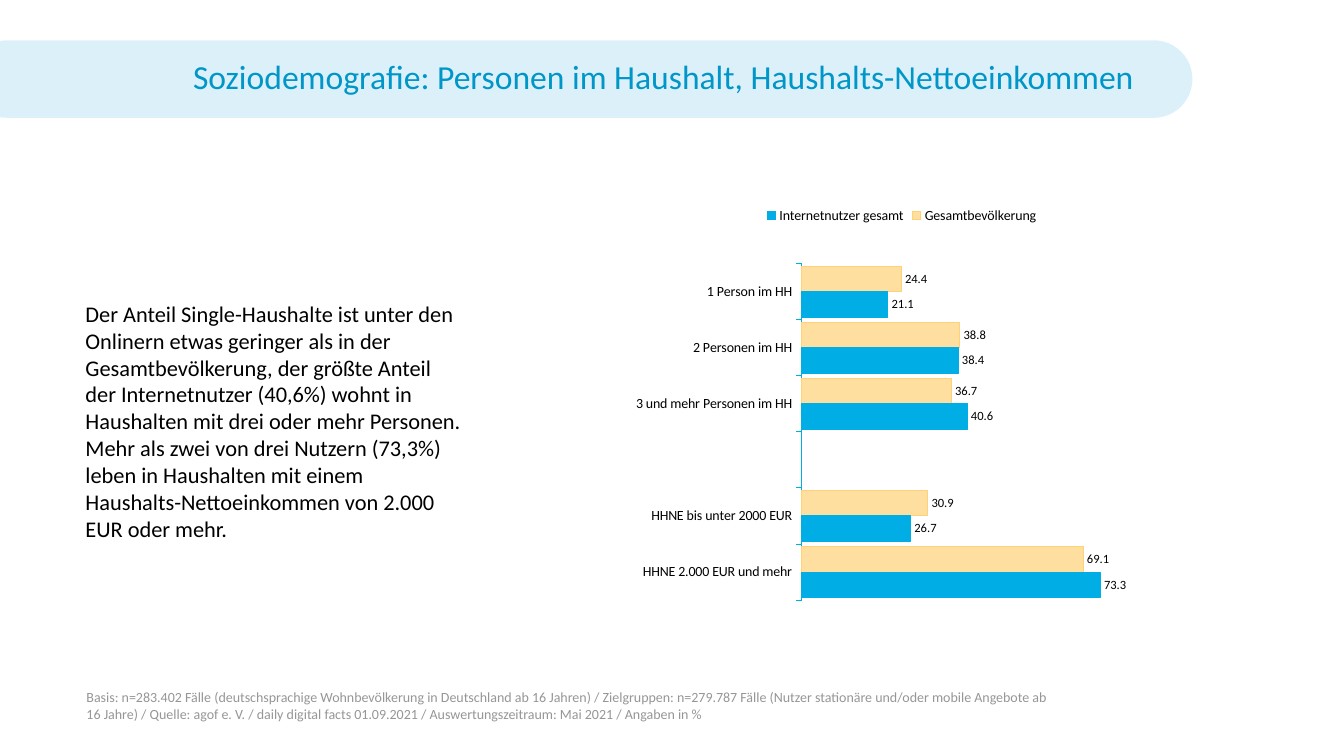
from lxml import etree
from pptx import Presentation
from pptx import util as u
from pptx.chart import data as cd
from pptx.dml import color
from pptx.enum import chart as ch, shapes, text
from pptx.oxml import ns, parse_xml

Pt = u.Pt
RGB = color.RGBColor
BLACK = RGB(0x00, 0x00, 0x00)
GREY = RGB(0x96, 0x96, 0x96)
PALE_BLUE = RGB(0xDC, 0xF0, 0xFA)
TITLE_BLUE = RGB(0x00, 0x96, 0xC8)
BAR_BLUE = RGB(0x00, 0xAD, 0xE4)
BAR_YELLOW = RGB(0xFF, 0xD2, 0x78)
NUMBER = "#,##0.0"

TITLE = "Soziodemografie: Personen im Haushalt, Haushalts-Nettoeinkommen"
BODY = (
    "Der Anteil Single-Haushalte ist unter den Onlinern etwas geringer als in der "
    "Gesamtbevölkerung, der größte Anteil der Internetnutzer (40,6%) wohnt in "
    "Haushalten mit drei oder mehr Personen. Mehr als zwei von drei Nutzern (73,3%) "
    "leben in Haushalten mit einem Haushalts-Nettoeinkommen von 2.000 EUR oder mehr."
)
BASIS = (
    "Basis: n=283.402 Fälle (deutschsprachige Wohnbevölkerung in Deutschland ab 16 Jahren) / "
    "Zielgruppen: n=279.787 Fälle (Nutzer stationäre und/oder mobile Angebote ab 16 Jahre) / "
    "Quelle: agof e. V. / daily digital facts 01.09.2021 / Auswertungszeitraum: Mai 2021 / "
    "Angaben in %"
)
CATEGORIES = [
    "1 Person im HH",
    "2 Personen im HH",
    "3 und mehr Personen im HH",
    "",
    "HHNE bis unter 2000 EUR",
    "HHNE 2.000 EUR und mehr",
]
SERIES = [
    ("Gesamtbevölkerung", [24.4, 38.8, 36.7, None, 30.9, 69.1], BAR_YELLOW, 70),
    ("Internetnutzer gesamt", [21.1, 38.4, 40.6, None, 26.7, 73.3], BAR_BLUE, 100),
]


def write(tf, content, *, size, color, anchor=text.MSO_ANCHOR.TOP,
          align=text.PP_ALIGN.LEFT, spacing=1.0, right=7.2):
    tf.word_wrap = True
    tf.vertical_anchor = anchor
    tf.margin_right = Pt(right)
    p = tf.paragraphs[0]
    p.alignment = align
    p.line_spacing = spacing
    r = p.add_run()
    r.text = content
    set_font(r.font, size, color)


def set_font(font, size, color=BLACK):
    font.name = SlideBuilder.font
    font.size = Pt(size)
    font.color.rgb = color


class SlideBuilder:
    font = "Calibri"

    def __init__(self, prs):
        self.s = prs.slides.add_slide(prs.slide_layouts[6])

    def text_box(self, box, content, **style):
        sp = self.s.shapes.add_textbox(*map(Pt, box))
        write(sp.text_frame, content, **style)

    def banner(self, box, content, fill, **style):
        sp = self.s.shapes.add_shape(shapes.MSO_SHAPE.ROUNDED_RECTANGLE, *map(Pt, box))
        sp.adjustments[0] = 0.5
        sp.shadow.inherit = False
        sp.fill.solid()
        sp.fill.fore_color.rgb = fill
        sp.line.fill.background()
        write(sp.text_frame, content, **style)

    def bar_chart(self, box, categories, series, plot_area):
        data = cd.CategoryChartData(number_format=NUMBER)
        data.categories = categories
        for name, values, _, _ in series:
            data.add_series(name, values)
        chart = self.s.shapes.add_chart(
            ch.XL_CHART_TYPE.BAR_CLUSTERED, *map(Pt, box), data).chart
        set_font(chart.font, 9)
        chart.has_title = False
        chart.has_legend = True
        chart.legend.position = ch.XL_LEGEND_POSITION.TOP
        chart.legend.include_in_layout = False
        set_font(chart.legend.font, 10)
        self.axes(chart)
        plot = chart.plots[0]
        plot.gap_width = 20
        plot.overlap = 0
        plot.vary_by_categories = False
        for bars, (_, _, tone, alpha) in zip(plot.series, series):
            self.bars(bars, tone, alpha)
        self.place_plot(chart, plot_area)

    def axes(self, chart):
        cat = chart.category_axis
        cat.reverse_order = True
        cat.has_major_gridlines = False
        cat.major_tick_mark = ch.XL_TICK_MARK.OUTSIDE
        cat.minor_tick_mark = ch.XL_TICK_MARK.NONE
        cat.tick_labels.number_format = "@"
        cat.tick_labels.number_format_is_linked = False
        set_font(cat.tick_labels.font, 10)
        cat.format.line.color.rgb = BAR_BLUE
        cat.format.line.width = Pt(0.75)
        val = chart.value_axis
        val.minimum_scale = 0
        val.maximum_scale = 80
        val.has_major_gridlines = False
        val.tick_labels.number_format = NUMBER
        val.tick_labels.number_format_is_linked = False
        val.visible = False

    def bars(self, bars, tone, alpha):
        bars.invert_if_negative = False
        bars.format.fill.solid()
        bars.format.fill.fore_color.rgb = tone
        bars.format.line.color.rgb = tone
        bars.format.line.width = Pt(0.75)
        if alpha < 100:
            clr = bars.format.fill._xPr.find(".//" + ns.qn("a:srgbClr"))
            etree.SubElement(clr, ns.qn("a:alpha"), val=str(alpha * 1000))
        labels = bars.data_labels
        labels.show_value = True
        labels.number_format = NUMBER
        labels.number_format_is_linked = False
        labels.position = ch.XL_LABEL_POSITION.OUTSIDE_END
        set_font(labels.font, 9)

    def place_plot(self, chart, plot_area):
        area = chart._chartSpace.find(".//" + ns.qn("c:plotArea"))
        for old in area.findall(ns.qn("c:layout")):
            area.remove(old)
        tags = ["layoutTarget", "xMode", "yMode", "x", "y", "w", "h"]
        values = ["inner", "edge", "edge", *plot_area]
        items = "".join(f'<c:{t} val="{v}"/>' for t, v in zip(tags, values))
        area.insert(0, parse_xml(
            f'<c:layout {ns.nsdecls("c")}><c:manualLayout>{items}</c:manualLayout></c:layout>'))


def main():
    prs = Presentation()
    prs.slide_width, prs.slide_height = Pt(960), Pt(540)
    slide = SlideBuilder(prs)
    middle = text.MSO_ANCHOR.MIDDLE
    slide.text_box((54, 140.4, 283.7, 320.4), BODY, size=16, color=BLACK, anchor=middle)
    slide.text_box((54.7, 488.2, 707.8, 28.8), BASIS, size=10, color=GREY)
    slide.banner((-22.3, 28.8, 874.1, 55.4), TITLE, PALE_BLUE, size=24, color=TITLE_BLUE,
                 anchor=middle, align=text.PP_ALIGN.RIGHT, spacing=0.9, right=33.8)
    slide.bar_chart((454.3, 140.4, 377.3, 320.4), CATEGORIES, SERIES,
                    (0.31, 0.15, 0.62, 0.75))
    prs.save("out.pptx")


if __name__ == "__main__":
    main()
